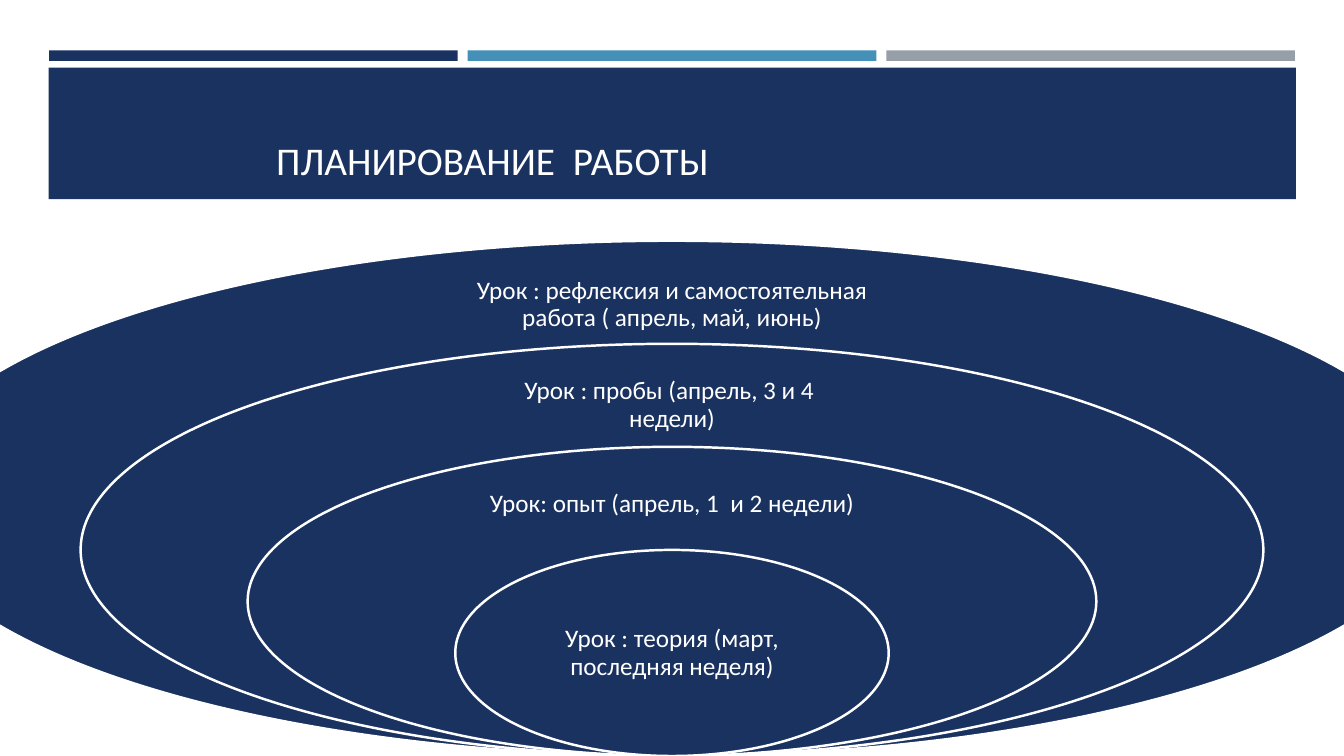
from pptx import Presentation
from pptx.dml.color import RGBColor
from pptx.enum.shapes import MSO_SHAPE
from pptx.enum.text import MSO_ANCHOR, PP_ALIGN
from pptx.util import Inches, Pt

NAVY, BLUE, GRAY, WHITE = "1A3260", "4590B8", "969FA7", "FFFFFF"


def color(value):
    return RGBColor.from_string(value)


class Deck:
    font = "Calibri"
    inset = Inches(0.14)

    def __init__(self):
        self.prs = Presentation()
        self.prs.slide_width = Inches(13.33)
        self.prs.slide_height = Inches(7.5)
        self.col = self.prs.slide_width / 100
        self.row = self.prs.slide_height / 100
        self.s = self.prs.slides.add_slide(self.prs.slide_layouts[5])

    def box(self, x, y, w, h):
        return (round(x * self.col), round(y * self.row),
                round(w * self.col), round(h * self.row))

    def shape(self, kind, area, fill, line=None):
        sp = self.s.shapes.add_shape(kind, *self.box(*area))
        sp.shadow.inherit = False
        sp.fill.solid()
        sp.fill.fore_color.rgb = color(fill)
        if line:
            sp.line.color.rgb = color(line)
            sp.line.width = Pt(1.75)
        else:
            sp.line.fill.background()

    def style_text(self, tf, text, size, align, anchor):
        tf.text = text
        tf.word_wrap = True
        tf.vertical_anchor = anchor
        p = tf.paragraphs[0]
        p.alignment = align
        p.line_spacing = 0.9
        for r in p.runs:
            r.font.name = self.font
            r.font.size = Pt(size)
            r.font.color.rgb = color(WHITE)
        return p

    def title(self, area, text, indent):
        sp = self.s.shapes.title
        sp.left, sp.top, sp.width, sp.height = self.box(*area)
        self.s.shapes._spTree.append(sp._element)
        p = self.style_text(sp.text_frame, text, 28, PP_ALIGN.LEFT, MSO_ANCHOR.BOTTOM)
        p._p.get_or_add_pPr().set("marL", str(round(indent * self.col)))

    def label(self, area, text):
        tf = self.s.shapes.add_textbox(*self.box(*area)).text_frame
        tf.margin_left = tf.margin_right = self.inset
        tf.margin_top = tf.margin_bottom = self.inset
        p = self.style_text(tf, text, 18, PP_ALIGN.CENTER, MSO_ANCHOR.MIDDLE)
        p.space_after = Pt(6.3)


def main():
    deck = Deck()

    for i, fill in enumerate((NAVY, BLUE, GRAY)):
        deck.shape(MSO_SHAPE.RECTANGLE, (3.65 + 31.15 * i, 6.67, 30.4, 1.4), fill)
    deck.shape(MSO_SHAPE.RECTANGLE, (3.63, 8.93, 92.8, 17.4), NAVY)
    deck.title((4.8, 10.27, 90.45, 14.8), "ПЛАНИРОВАНИЕ  РАБОТЫ", 15)

    stages = [
        (115.05, 32.2, 35.2, 10.27,
         "Урок : рефлексия и самостоятельная работа ( апрель, май, июнь)"),
        (88, 30.75, 48.67, 9.87, "Урок : пробы (апрель, 3 и 4  недели)"),
        (63.15, 29.5, 62.13, 9.2, "Урок: опыт (апрель, 1  и 2 недели)"),
        (32.25, 22.8, 79.6, 13.6, "Урок : теория (март, последняя неделя)"),
    ]
    for i, (oval_w, text_w, text_y, text_h, text) in enumerate(stages):
        oval_h = 68.15 * (1 - 0.2 * i)
        deck.shape(MSO_SHAPE.OVAL,
                   (50 - oval_w / 2, 100 - oval_h, oval_w, oval_h), NAVY, WHITE)
        deck.label((50 - text_w / 2, text_y, text_w, text_h), text)

    deck.prs.save("out.pptx")


if __name__ == "__main__":
    main()
